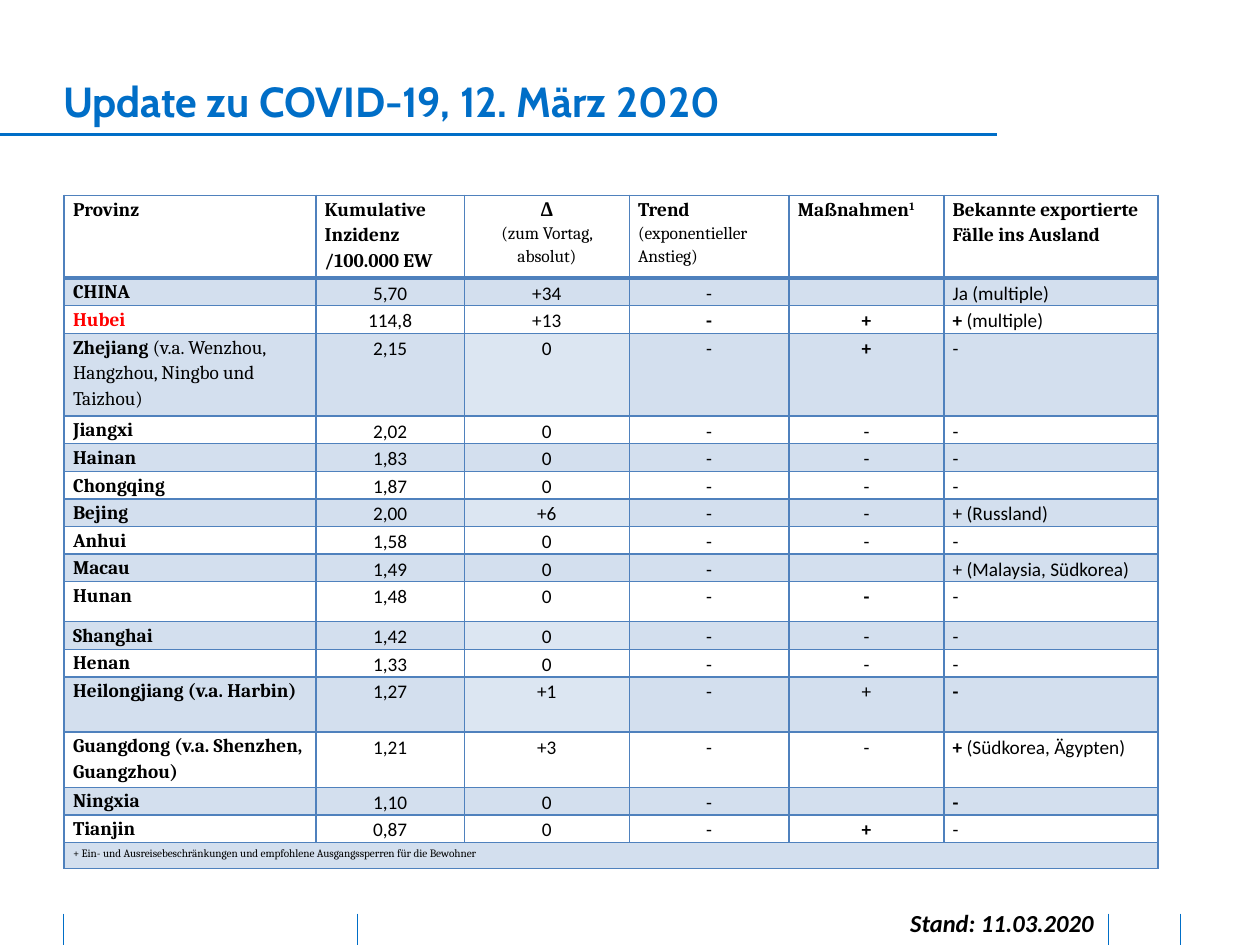
from dataclasses import dataclass

import pptx
import pptx.dml.color
import pptx.enum.shapes
import pptx.enum.text
import pptx.oxml.ns
import pptx.util
from lxml import etree

ALIGN = pptx.enum.text.PP_ALIGN
ANCHOR = pptx.enum.text.MSO_ANCHOR
qn = pptx.oxml.ns.qn
inches = pptx.util.Inches


@dataclass(frozen=True)
class Theme:
    blue: str = "006EC7"
    border: str = "4F81BD"
    band: str = "D3DFEE"
    light_band: str = "DCE6F2"
    text: str = "000000"
    alert: str = "FF0000"
    title_font: str = "Cabin"
    head_font: str = "Cambria"
    body_font: str = "Calibri"
    title_size: int = 24
    date_size: int = 14
    table_size: int = 11
    small_size: int = 10


@dataclass(frozen=True)
class Box:
    left: float
    top: float
    width: float
    height: float

    def emu(self):
        return [inches(n) for n in (self.left, self.top, self.width, self.height)]


THEME = Theme()
PAGE = Box(0, 0, 10, 7.5)

# Asterisks switch bold on and off; a line break starts a new paragraph
HEADER = ("*Provinz*", "*Kumulative Inzidenz /100.000 EW*", "*Δ*\n(zum Vortag, absolut)",
          "*Trend*\n(exponentieller Anstieg)", "*Maßnahmen*",
          "*Bekannte exportierte Fälle ins Ausland*")
PROVINCES = [
    ("*CHINA*", "5,70", "+34", "-", "", "Ja (multiple)"),
    ("*Hubei*", "114,8", "+13", "*-*", "*+*", "*+* (multiple)"),
    ("*Zhejiang *(v.a. Wenzhou, Hangzhou, Ningbo und Taizhou)",
     "2,15", "0", "-", "*+*", "-"),
    ("*Jiangxi*", "2,02", "0", "-", "-", "-"),
    ("*Hainan*", "1,83", "0", "-", "-", "-"),
    ("*Chongqing*", "1,87", "0", "-", "-", "-"),
    ("*Bejing*", "2,00", "+6", "-", "-", "+ (Russland)"),
    ("*Anhui*", "1,58", "0", "-", "-", "-"),
    ("*Macau*", "1,49", "0", "-", "", "+ (Malaysia, Südkorea)"),
    ("*Hunan*", "1,48", "0", "-", "*-*", "-"),
    ("*Shanghai*", "1,42", "0", "-", "-", "-"),
    ("*Henan*", "1,33", "0", "-", "-", "-"),
    ("*Heilongjiang (v.a. Harbin)*", "1,27", "+1", "-", "+", "*-*"),
    ("*Guangdong (v.a. Shenzhen, Guangzhou)*", "1,21", "+3", "-", "-",
     "*+* (Südkorea, Ägypten)"),
    ("*Ningxia*", "1,10", "0", "-", "", "*-*"),
    ("*Tianjin*", "0,87", "0", "-", "*+*", "-"),
]
FOOTNOTE = "+ Ein- und Ausreisebeschränkungen und empfohlene Ausgangssperren für die Bewohner"
COLUMN_SHARES = [2, 1.18, 1.31, 1.27, 1.23, 1.7]
ROW_SHARES = [3, 1, 1, 3] + [1] * 6 + [1.45, 1, 1, 2, 2, 1, 1, 0.95]
LIGHT_DELTA_ROWS = {3, 7, 11, 13}


def rgb(value):
    return pptx.dml.color.RGBColor.from_string(value)


def add_text(para, text, *, font, size, color=THEME.text, bold=False, italic=False, raised=False):
    span = para.add_run()
    span.text = text
    span.font.name, span.font.size = font, pptx.util.Pt(size)
    span.font.bold, span.font.italic = bold, italic
    span.font.color.rgb = rgb(color)
    if raised:
        span.font._element.set("baseline", "30000")


def add_rule(page, start, end, weight):
    """Draw a line between two points given in inches."""
    rule = page.shapes.add_connector(pptx.enum.shapes.MSO_CONNECTOR.STRAIGHT,
                                     *[inches(n) for n in (*start, *end)])
    rule.line.color.rgb = rgb(THEME.blue)
    rule.line.width = pptx.util.Pt(weight)
    etree.SubElement(rule._element.spPr, qn("a:effectLst"))


def add_title(page, box):
    title = page.shapes.title
    title.left, title.top, title.width, title.height = box.emu()
    frame = title.text_frame
    frame.margin_left = frame.margin_right = frame.margin_top = frame.margin_bottom = 0
    frame.vertical_anchor = ANCHOR.MIDDLE
    frame.word_wrap = True
    para = frame.paragraphs[0]
    para.alignment = ALIGN.LEFT
    add_text(para, "Update zu COVID-19, 12. März 2020", font=THEME.title_font,
             size=THEME.title_size, color=THEME.blue, bold=True)
    # Underline running in from the slide's left edge
    add_rule(page, (0, 1.07), (7.91, 1.07), 1.5)


def set_borders(cell, row):
    """Thin borders all round, with a heavier rule under the header row."""
    heavy = {0: "B", 1: "T"}.get(row)
    for side in "LRTB":
        width = pptx.util.Pt(2.25 if side == heavy else 1)
        line = etree.SubElement(cell._tc.get_or_add_tcPr(), qn(f"a:ln{side}"), w=str(width))
        fill = etree.SubElement(line, qn("a:solidFill"))
        etree.SubElement(fill, qn("a:srgbClr"), val=THEME.border)


def format_cell(cell, row, column):
    cell.margin_left = cell.margin_right = inches(0.07)
    cell.margin_top = cell.margin_bottom = 0
    set_borders(cell, row)
    if row % 2:
        light = column == 2 and row in LIGHT_DELTA_ROWS
        cell.fill.solid()
        cell.fill.fore_color.rgb = rgb(THEME.light_band if light else THEME.band)
    else:
        cell.fill.background()


def fill_cell(cell, text, row, column):
    centred = column == 2 or (row > 0 and 0 < column < 5)
    for index, line in enumerate(text.split("\n")):
        para = cell.text_frame.paragraphs[0] if index == 0 else cell.text_frame.add_paragraph()
        para.alignment = ALIGN.CENTER if centred else ALIGN.LEFT
        para.line_spacing = 1.15
        for part, words in enumerate(line.split("*")):
            if words:
                add_text(para, words, bold=part % 2 == 1,
                         font=THEME.head_font if row == 0 or column == 0 else THEME.body_font,
                         size=THEME.small_size if index else THEME.table_size,
                         color=THEME.alert if words == "Hubei" else THEME.text)
        if not line:  # keeps an empty cell as low as its row
            etree.SubElement(para._p, qn("a:endParaRPr"), sz=str(THEME.table_size * 100))


def add_province_table(page, box):
    rows = [HEADER, *PROVINCES]
    table = page.shapes.add_table(len(ROW_SHARES), len(COLUMN_SHARES), *box.emu()).table
    table.first_row = table.horz_banding = False
    for column, share in zip(table.columns, COLUMN_SHARES):
        column.width = inches(box.width * share / sum(COLUMN_SHARES))
    for row, share in zip(table.rows, ROW_SHARES):
        row.height = inches(box.height * share / sum(ROW_SHARES))
    for row in range(len(ROW_SHARES)):
        for column in range(len(COLUMN_SHARES)):
            format_cell(table.cell(row, column), row, column)
    for row, texts in enumerate(rows):
        for column, text in enumerate(texts):
            fill_cell(table.cell(row, column), text, row, column)
    raised = dict(font=THEME.head_font, size=THEME.table_size, raised=True)
    add_text(table.cell(0, 4).text_frame.paragraphs[0], "1", bold=True, **raised)

    # Footnote across the whole last row
    last = len(rows)
    note = table.cell(last, 0)
    note.merge(table.cell(last, len(COLUMN_SHARES) - 1))
    para = note.text_frame.paragraphs[0]
    para.line_spacing = 1.15
    add_text(para, FOOTNOTE, **raised)


def add_footer(page, box):
    # Ticks down to the slide's bottom edge
    for x in (0.5, 2.84, 8.8, 9.37):
        add_rule(page, (x, 7.25), (x, PAGE.height), 0.5)
    # Date of the figures
    frame = page.shapes.add_textbox(*box.emu()).text_frame
    frame.word_wrap = True
    para = frame.paragraphs[0]
    para.alignment = ALIGN.RIGHT
    add_text(para, "Stand: 11.03.2020", font=THEME.body_font, size=THEME.date_size,
             bold=True, italic=True)


def main():
    deck = pptx.Presentation()
    deck.slide_width, deck.slide_height = inches(PAGE.width), inches(PAGE.height)
    page = deck.slides.add_slide(deck.slide_layouts[5])
    add_title(page, Box(0.5, 0.6, 8.85, 0.4))
    add_province_table(page, Box(0.51, 1.55, 8.68, 5.35))
    add_footer(page, Box(6.65, 7.16, 2.13, 0.34))
    deck.save("out.pptx")


if __name__ == "__main__":
    main()
